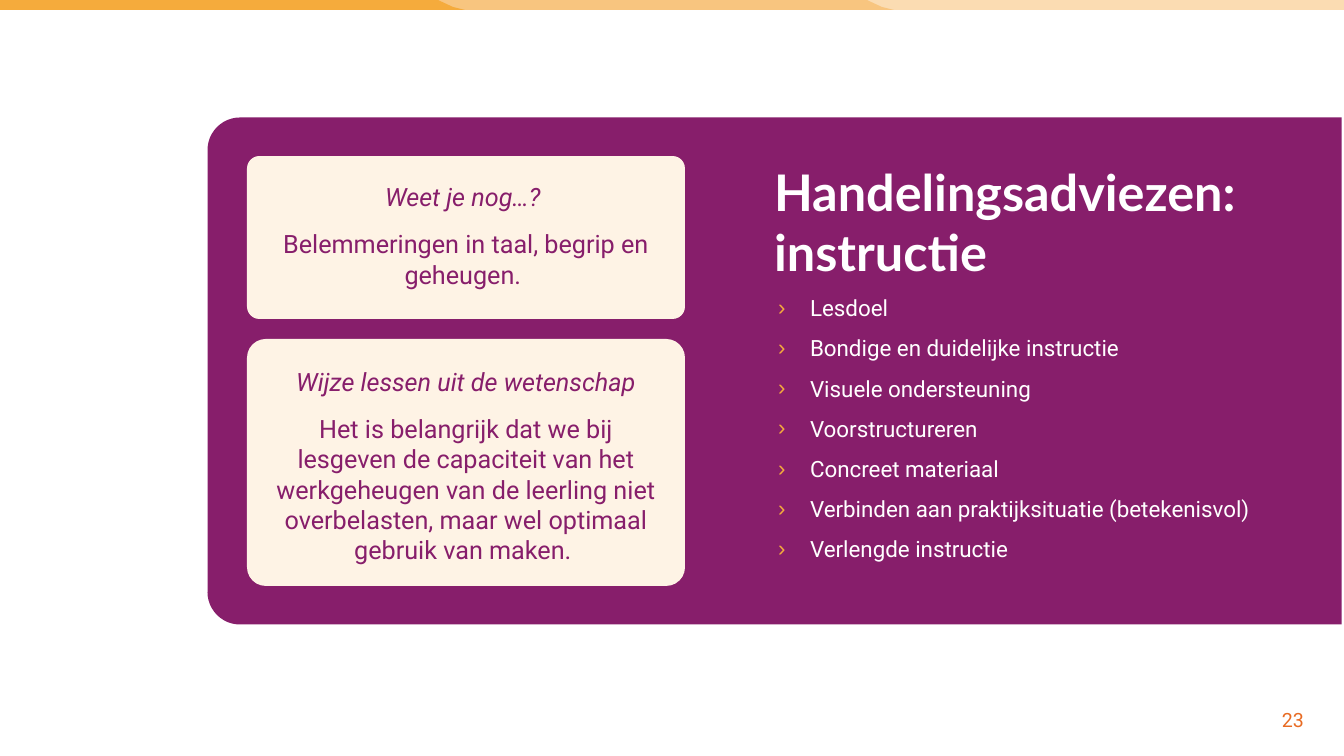
"""Build the slide with teaching advice on instruction."""
import pptx
import pptx.util
import pptx.dml.color
import pptx.enum.shapes
import pptx.enum.text
from lxml import etree

WIDE, HIGH, BAND = 1344, 756, 10
PLUM, CREAM, WHITE, AMBER, RUST = "871E6B", "FEF3E5", "FFFFFF", "F5AB3C", "E86B23"
TITLE = ["Handelingsadviezen:\u00a0", "instructie"]
ADVICE = [
    "Lesdoel",
    "Bondige en duidelijke instructie",
    "Visuele ondersteuning",
    "Voorstructureren",
    "Concreet materiaal",
    "Verbinden aan praktijksituatie (betekenisvol)",
    "Verlengde instructie",
]
CARDS = [
    (156, 163, "Weet je nog…? ", "Belemmeringen in taal, begrip en geheugen. "),
    (339, 247, "Wijze lessen uit de wetenschap",
     "Het is belangrijk dat we bij lesgeven de capaciteit van het werkgeheugen "
     "van de leerling niet overbelasten, maar wel optimaal gebruik van maken. "),
]
TIP = [(0, 0), (2, 1), (15, 7), (27, 10)]
FLAT = [(0, 0), (0, BAND)]
BANDS = [
    (841, WIDE, FLAT, "FBDCB2"),
    (428, 867, TIP, "F8C57F"),
    (0, 438, TIP, AMBER),
]
SCALE = 914400 / 100.8
KIND = pptx.enum.shapes.MSO_SHAPE
ALIGN = pptx.enum.text.PP_ALIGN
TOP = pptx.enum.text.MSO_ANCHOR.TOP


def px(num):
    return round(num * SCALE)


def rgb(code):
    return pptx.dml.color.RGBColor.from_string(code)


def paint(shape, code):
    shape.shadow.inherit = False
    shape.fill.solid()
    shape.fill.fore_color.rgb = rgb(code)
    shape.line.fill.background()


def place(shape, left, top, width, height):
    shape.left, shape.top = px(left), px(top)
    shape.width, shape.height = px(width), px(height)


def setup(shape):
    frame = shape.text_frame
    frame.word_wrap = True
    frame.auto_size = pptx.enum.text.MSO_AUTO_SIZE.NONE
    frame.vertical_anchor = TOP
    return frame


def write(frame, row, text, size, code, align, face="Roboto", bold=False, slant=False):
    para = frame.add_paragraph() if row else frame.paragraphs[0]
    para.alignment = align
    run = para.add_run()
    run.text = text
    font = run.font
    font.name, font.size, font.bold, font.italic = face, pptx.util.Pt(size), bold, slant
    font.color.rgb = rgb(code)
    return para


def bullet(para):
    props = para._p.get_or_add_pPr()
    props.set("marL", str(px(32)))
    props.set("indent", str(px(-32)))
    space = pptx.oxml.ns.qn
    tint = etree.SubElement(props, space("a:buClr"))
    etree.SubElement(tint, space("a:srgbClr")).set("val", AMBER)
    etree.SubElement(props, space("a:buChar")).set("char", "›")
    para.line_spacing = pptx.util.Pt(28.7)
    para.space_before = pptx.util.Pt(0)


def main():
    deck = pptx.Presentation()
    deck.slide_width, deck.slide_height = px(WIDE), px(HIGH)
    slide = deck.slides.add_slide(deck.slide_layouts[1])
    shapes = slide.shapes
    title, body = slide.placeholders

    for left, end, edge, code in BANDS:
        path = shapes.build_freeform(left, 0, SCALE)
        path.add_line_segments([(end + x, y) for x, y in edge] + [(left, BAND)])
        paint(path.convert_to_shape(), code)

    panel = shapes.add_shape(KIND.ROUND_2_SAME_RECTANGLE, px(521), px(-196), px(507), px(1134))
    panel.rotation = 270
    panel.adjustments[0] = 0.064
    paint(panel, PLUM)

    for top, height, head, text in CARDS:
        card = shapes.add_shape(KIND.ROUNDED_RECTANGLE, px(247), px(top), px(438), px(height))
        card.adjustments[0] = 0.076
        paint(card, CREAM)
        frame = setup(card)
        frame.margin_left = frame.margin_right = px(19)
        frame.margin_top = px(22)
        write(frame, 0, head, 18, PLUM, ALIGN.CENTER, slant=True)
        para = write(frame, 1, text, 18, PLUM, ALIGN.CENTER)
        para.space_before = pptx.util.Pt(12)

    for holder in (title, body):
        shapes._spTree.append(holder._element)
    place(title, 764, 156, 540, 132)
    frame = setup(title)
    for row, text in enumerate(TITLE):
        write(frame, row, text, 36, WHITE, ALIGN.LEFT, "Lato", bold=True)

    place(body, 768, 276, 544, 300)
    frame = setup(body)
    for row, text in enumerate(ADVICE):
        bullet(write(frame, row, text, 16, WHITE, ALIGN.LEFT))

    page = shapes.add_textbox(px(1266), px(703), px(54), px(34))
    write(setup(page), 0, "23", 14, RUST, ALIGN.CENTER)
    deck.save("out.pptx")


if __name__ == "__main__":
    main()
